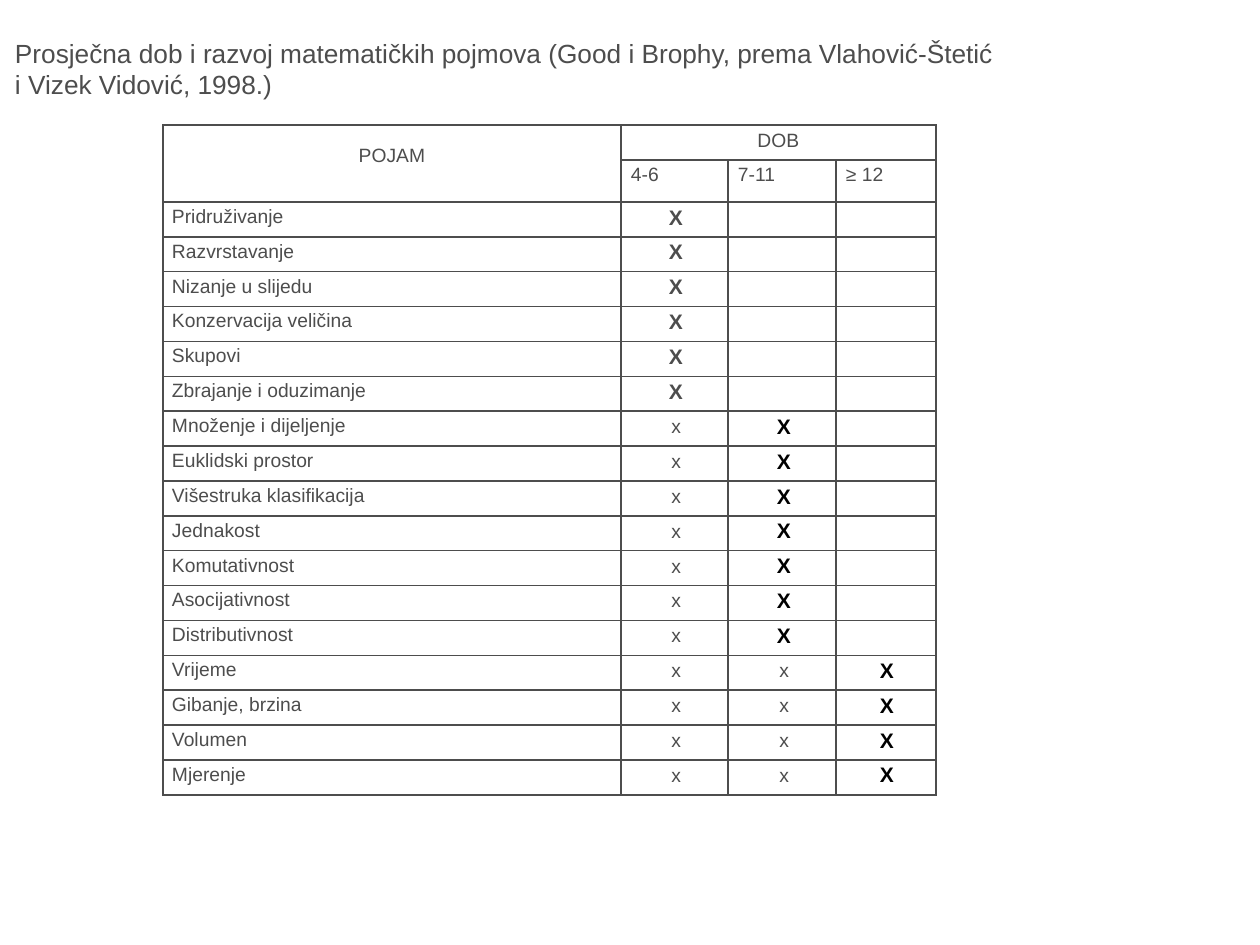
from lxml.etree import SubElement
from pptx import Presentation
from pptx.dml.color import RGBColor
from pptx.enum.text import MSO_ANCHOR as Anchor, MSO_AUTO_SIZE as AutoSize, PP_ALIGN as Align
from pptx.oxml.ns import qn
from pptx.util import Pt

SCALE = 914400 / 126
GRAY, BLACK = "4D4D4D", "000000"
FONT = "Arial"
TITLE = ("Prosječna dob i razvoj matematičkih pojmova (Good i Brophy, "
         "prema Vlahović-Štetić i Vizek Vidović, 1998.)")
AGES = ["4-6", "7-11", "≥ 12"]
CONCEPTS = [
    ["Pridruživanje", "Razvrstavanje", "Nizanje u slijedu",
     "Konzervacija veličina", "Skupovi", "Zbrajanje i oduzimanje"],
    ["Množenje i dijeljenje", "Euklidski prostor", "Višestruka klasifikacija",
     "Jednakost", "Komutativnost", "Asocijativnost", "Distributivnost"],
    ["Vrijeme", "Gibanje, brzina", "Volumen", "Mjerenje"],
]
COLUMNS = [458, 107, 108, 100]
HEADER_ROWS = [35, 42]
MARK_INSETS = [45, 45, 42]


def px(length):
    return round(length * SCALE)


def color(value):
    return RGBColor.from_string(value)


def style(para, size, shade=GRAY, bold=False, align=Align.LEFT):
    para.alignment = align
    para.font.name = FONT
    para.font.size = Pt(size)
    para.font.bold = bold
    para.font.color.rgb = color(shade)


def set_margins(target, left=0, top=0, right=0):
    target.margin_left, target.margin_top = px(left), px(top)
    target.margin_right, target.margin_bottom = px(right), 0


def write(cell, text, size=11, left=0, top=4, right=0, **look):
    cell.text = text
    set_margins(cell, left, top, right)
    style(cell.text_frame.paragraphs[0], size, **look)


def prepare_cell(cell):
    set_margins(cell)
    cell.vertical_anchor = Anchor.TOP
    properties = cell._tc.get_or_add_tcPr()
    for side in ("a:lnL", "a:lnR", "a:lnT", "a:lnB"):
        line = SubElement(properties, qn(side), w=str(Pt(1)))
        fill = SubElement(line, qn("a:solidFill"))
        SubElement(fill, qn("a:srgbClr"), val=GRAY)
    cell.fill.background()
    SubElement(cell.text_frame.paragraphs[0]._p, qn("a:endParaRPr"), sz="1000")


def add_title(page, left, top, width, height):
    title = page.shapes.title
    title.left, title.top = px(left), px(top)
    title.width, title.height = px(width), px(height)
    frame = title.text_frame
    frame.text = TITLE
    frame.word_wrap = True
    frame.auto_size = AutoSize.NONE
    frame.vertical_anchor = Anchor.TOP
    set_margins(frame, left=1, top=4)
    style(frame.paragraphs[0], 15)


def add_header(table):
    concept, ages = table.cell(0, 0), table.cell(0, 1)
    concept.merge(table.cell(1, 0))
    ages.merge(table.cell(0, 3))
    write(concept, "POJAM", top=20, align=Align.CENTER)
    write(ages, "DOB", top=5, align=Align.CENTER)
    for column, age in enumerate(AGES, 1):
        write(table.cell(1, column), age, left=10)


def add_marks(table, row, stage):
    for age in range(stage + 1):
        cell, inset = table.cell(row, age + 1), MARK_INSETS[age]
        if age == stage:
            write(cell, "X", 12, right=inset, bold=True,
                  shade=BLACK if stage else GRAY, align=Align.RIGHT)
        else:
            write(cell, "x", top=5, right=inset + 2, align=Align.RIGHT)


def add_concept_table(page, left, top, width, height):
    entries = [(name, stage) for stage, names in enumerate(CONCEPTS) for name in names]
    first = len(HEADER_ROWS)
    frame = page.shapes.add_table(first + len(entries), len(COLUMNS),
                                  px(left), px(top), px(width), px(height))
    table = frame.table
    table.first_row = table.horz_banding = False
    for column, size in zip(table.columns, COLUMNS):
        column.width = px(size)
    body_row = (height - sum(HEADER_ROWS)) / len(entries)
    for row, size in zip(table.rows, HEADER_ROWS + [body_row] * len(entries)):
        row.height = px(size)
    for cell in table.iter_cells():
        prepare_cell(cell)
    add_header(table)
    for row, (name, stage) in enumerate(entries, first):
        write(table.cell(row, 0), name, left=9)
        add_marks(table, row, stage)


def main():
    deck = Presentation()
    deck.slide_width, deck.slide_height = px(1260), px(945)
    page = deck.slides.add_slide(deck.slide_layouts[5])
    add_concept_table(page, 163, 125, sum(COLUMNS), 670)
    add_title(page, 14, 33, 984, 67)
    deck.save("out.pptx")


if __name__ == "__main__":
    main()
